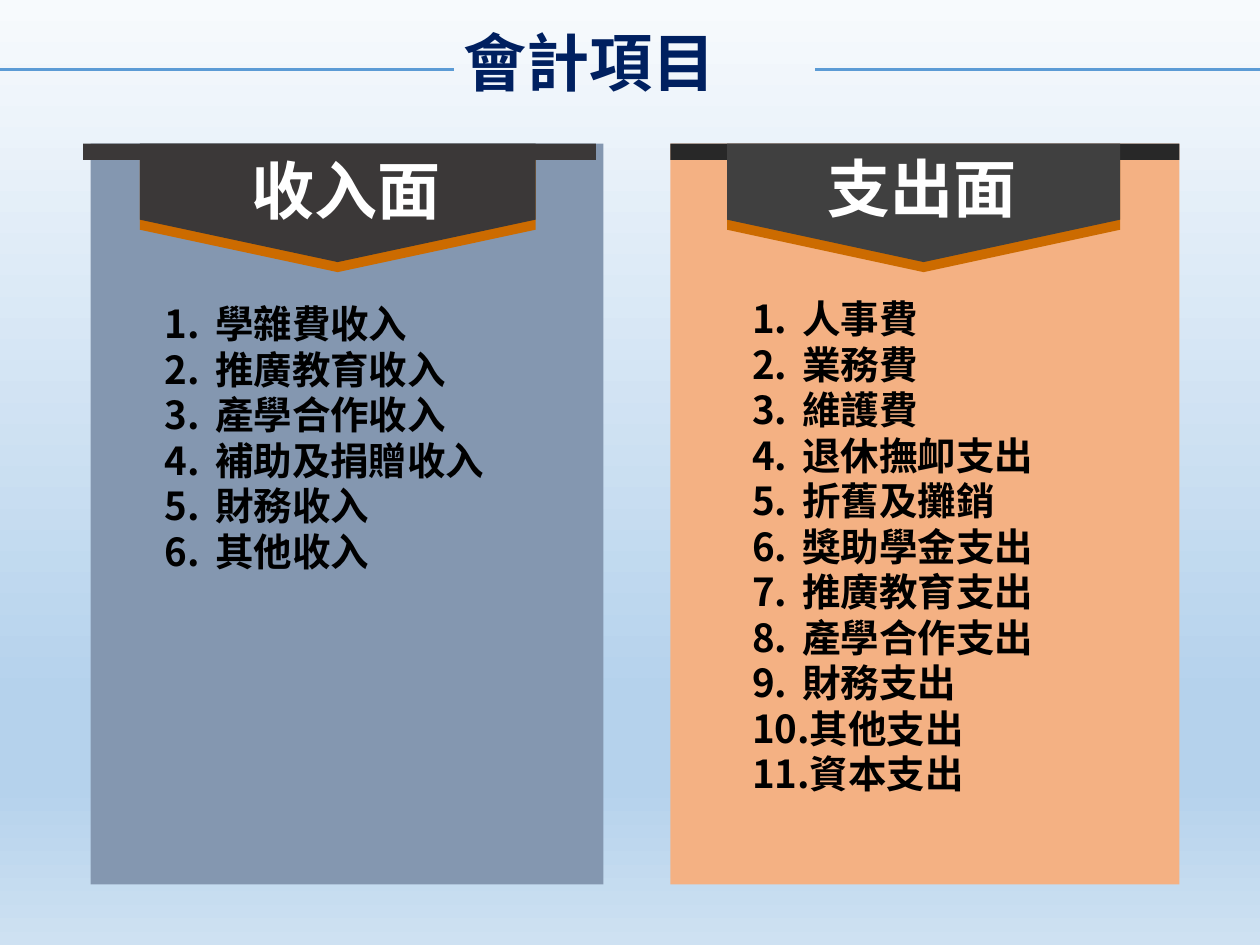
from copy import deepcopy
from dataclasses import dataclass

from lxml import etree
from pptx import Presentation
from pptx.dml.color import RGBColor
from pptx.enum.shapes import MSO_CONNECTOR, MSO_SHAPE
from pptx.enum.text import MSO_AUTO_SIZE
from pptx.oxml.ns import qn
from pptx.util import Inches, Pt

RECTANGLE = MSO_SHAPE.RECTANGLE
PENTAGON = MSO_SHAPE.PENTAGON
STRAIGHT = MSO_CONNECTOR.STRAIGHT
FIT_SHAPE = MSO_AUTO_SIZE.SHAPE_TO_FIT_TEXT
FONT = "Noto Sans CJK SC"
SLIDE_WIDTH, SLIDE_HEIGHT = Inches(10), Inches(7.5)
COLUMNS, ROWS = 100, 75
PANEL_TOP, PANEL_ROWS = 11.4, 58.8
BAR_ROWS, BANNER_ROWS, BANNER_DROP = 1.3, 9.4, 0.8
BANNER_POINT = 0.358
TITLE_LINE_ROW = 5.5
BACKGROUND_STOPS = ((0, "F7FAFD"), (74, "B5D2EC"), (83, "B5D2EC"), (100, "CEE1F2"))


@dataclass(frozen=True)
class Box:
    """A place on the slide, in grid columns and rows."""

    left: float
    top: float
    width: float
    height: float


@dataclass(frozen=True)
class Panel:
    """One side of the accounts: its heading, items, places and colours."""

    heading: str
    items: tuple[str, ...]
    left: float
    width: float
    bar_left: float
    banner_left: float
    banner_width: float
    heading_box: Box
    list_box: Box
    fill: str
    bar_fill: str
    banner_fill: str


PANELS = (
    Panel("收入面",
          ("學雜費收入", "推廣教育收入", "產學合作收入", "補助及捐贈收入", "財務收入", "其他收入"),
          7.2, 40.7, 6.6, 11.1, 31.4,
          Box(19, 11.5, 22, 8.4), Box(11.1, 23.4, 34.3, 22.9),
          "8497B0", "3B3838", "3B3838"),
    Panel("支出面",
          ("人事費", "業務費", "維護費", "退休撫卹支出", "折舊及攤銷", "獎助學金支出",
           "推廣教育支出", "產學合作支出", "財務支出", "其他支出", "資本支出"),
          53.2, 40.4, 53.2, 57.7, 31.2,
          Box(64.7, 11.4, 21.9, 8.4), Box(57.7, 23, 37.8, 41.1),
          "F4B183", "282828", "404040"),
)


def color(value: str) -> RGBColor:
    """Turn a hex string into a colour."""
    return RGBColor.from_string(value)


def across(columns: float) -> int:
    """Convert grid columns to a length."""
    return round(SLIDE_WIDTH * columns / COLUMNS)


def down(rows: float) -> int:
    """Convert grid rows to a length."""
    return round(SLIDE_HEIGHT * rows / ROWS)


def place(box: Box) -> tuple[int, int, int, int]:
    """Convert a box to left, top, width and height."""
    return across(box.left), down(box.top), across(box.width), down(box.height)


def paint_background(slide) -> None:
    """Fill the slide with a vertical gradient."""
    fill = slide.background.fill
    fill.gradient()
    fill.gradient_angle = 270
    stop_list = next(slide.element.iter(qn("a:gsLst")))
    while len(stop_list) < len(BACKGROUND_STOPS):
        stop_list.append(deepcopy(stop_list[0]))
    for stop, (percent, value) in zip(fill.gradient_stops, BACKGROUND_STOPS):
        stop.position = percent / 100
        stop.color.rgb = color(value)


def add_block(group, kind, box: Box, fill: str):
    """Add a plain filled shape."""
    shape = group.shapes.add_shape(kind, *place(box))
    shape.shadow.inherit = False
    shape.fill.solid()
    shape.fill.fore_color.rgb = color(fill)
    shape.line.fill.background()
    return shape


def add_banner(group, box: Box, fill: str) -> None:
    """Add a pentagon that covers the box and points down."""
    middle = box.left + box.width / 2
    center = box.top + box.height / 2
    turned = Box(middle - box.height / 2, center - box.width / 2, box.height, box.width)
    banner = add_block(group, PENTAGON, turned, fill)
    banner.adjustments[0] = BANNER_POINT
    banner.rotation = 90


def add_text(group, box: Box, lines: tuple[str, ...], size: float, fill: str, wrap: bool):
    """Add a bold text box with one paragraph for each line."""
    text_frame = group.shapes.add_textbox(*place(box)).text_frame
    text_frame.text = "\n".join(lines)
    text_frame.word_wrap = wrap
    text_frame.auto_size = FIT_SHAPE
    for paragraph in text_frame.paragraphs:
        for run in paragraph.runs:
            run.font.name = FONT
            run.font.size = Pt(size)
            run.font.bold = True
            run.font.color.rgb = color(fill)
            etree.SubElement(run.font._element, qn("a:ea"), typeface=FONT)
    return text_frame


def number_paragraphs(text_frame) -> None:
    """Number the paragraphs with a hanging indent."""
    for paragraph in text_frame.paragraphs:
        paragraph.line_spacing = Pt(26)
        properties = paragraph._p.get_or_add_pPr()
        properties.set("marL", str(Inches(0.5)))
        properties.set("indent", str(Inches(-0.4)))
        etree.SubElement(properties, qn("a:buFont"), typeface=FONT)
        etree.SubElement(properties, qn("a:buAutoNum"), type="arabicPeriod")


def add_panel(slide, panel: Panel) -> None:
    """Draw one side of the accounts."""
    group = slide.shapes.add_group_shape()
    banner = Box(panel.banner_left, PANEL_TOP, panel.banner_width, BANNER_ROWS)
    edge = Box(banner.left, PANEL_TOP + BANNER_DROP, banner.width, BANNER_ROWS)
    add_block(group, RECTANGLE, Box(panel.left, PANEL_TOP, panel.width, PANEL_ROWS), panel.fill)
    add_banner(group, edge, "CC6B00")
    add_block(group, RECTANGLE, Box(panel.bar_left, PANEL_TOP, panel.width, BAR_ROWS), panel.bar_fill)
    add_banner(group, banner, panel.banner_fill)
    add_text(group, panel.heading_box, (panel.heading,), 36, "FFFFFF", False)
    number_paragraphs(add_text(group, panel.list_box, panel.items, 22, "000000", True))


def add_title_line(group, start: float, end: float) -> None:
    """Draw a horizontal line beside the title."""
    height = down(TITLE_LINE_ROW)
    line = group.shapes.add_connector(STRAIGHT, across(start), height, across(end), height)
    line.line.color.rgb = color("5B9BD5")
    line.line.width = Pt(1.5)
    etree.SubElement(line._element.spPr, qn("a:effectLst"))


def add_title(slide) -> None:
    """Draw the title between its two lines."""
    group = slide.shapes.add_group_shape()
    title = add_text(group, Box(32.5, 1.4, 33.5, 7.1), ("會計項目",), 36, "002060", True)
    title.margin_left = Inches(0.43)
    for start, end in ((0, 36), (64.7, COLUMNS)):
        add_title_line(group, start, end)


def main() -> None:
    """Build and save the slide."""
    presentation = Presentation()
    presentation.slide_width, presentation.slide_height = SLIDE_WIDTH, SLIDE_HEIGHT
    slide = presentation.slides.add_slide(presentation.slide_layouts[6])
    paint_background(slide)
    for panel in PANELS:
        add_panel(slide, panel)
    add_title(slide)
    presentation.save("out.pptx")


if __name__ == "__main__":
    main()
